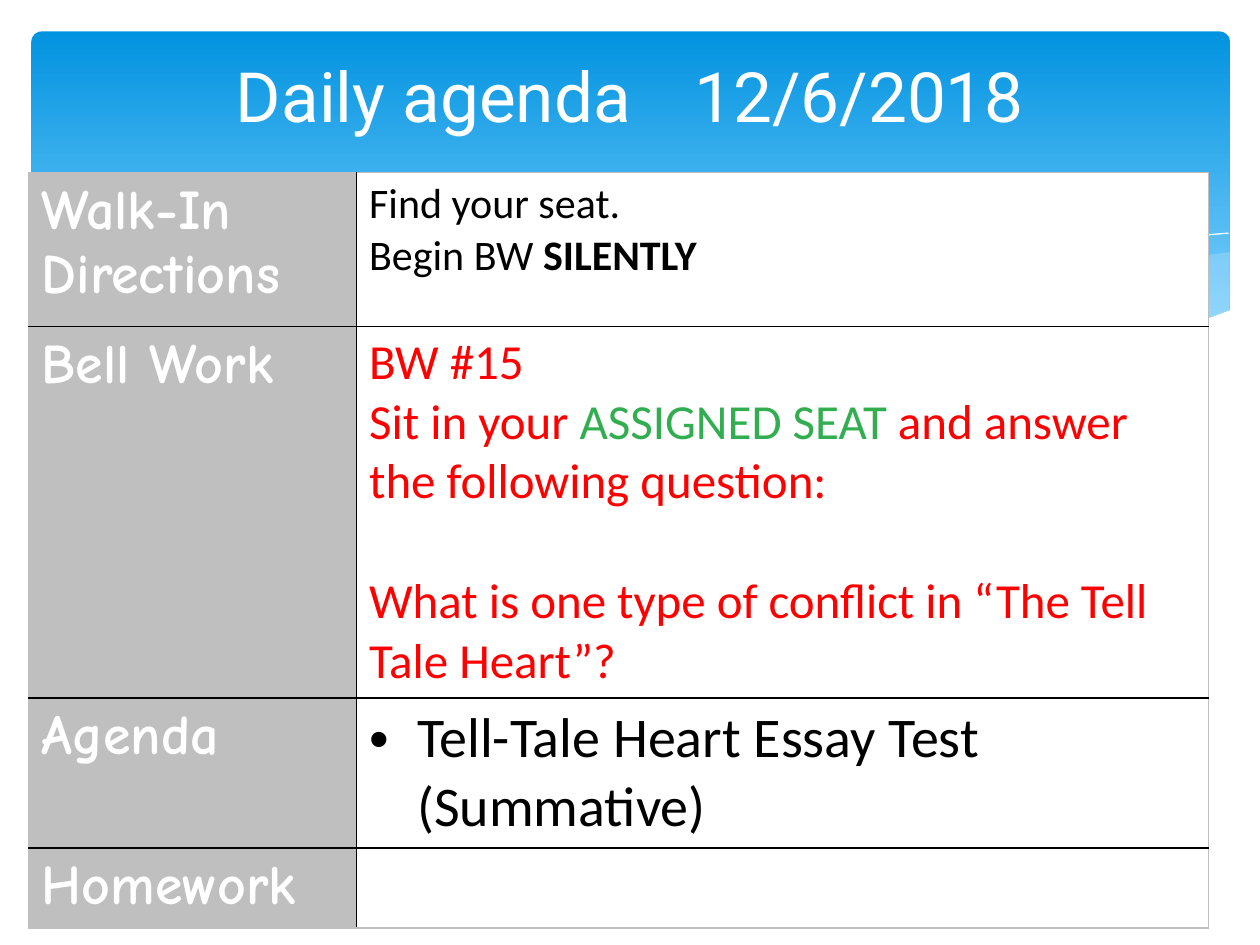
import pptx
import pptx.dml.color
import pptx.enum.shapes
import pptx.enum.text
import pptx.oxml
import pptx.oxml.ns
import pptx.util
from pptx.util import Inches, Pt

BLACK, WHITE, GREY, RED, GREEN = "000000", "FFFFFF", "BFBFBF", "FF0000", "32AE51"
COLUMN_WIDTHS = [2.6, 6.76]
ROW_HEIGHTS = [1.22, 2.95, 1.19, 0.61]
LABELS = ["Walk-In Directions", "Bell Work", "Agenda", "Homework"]

RIGHT_RIBBON = [
    (9.76, 2), (9.48, 2.04), (9.06, 2.13), (8.61, 2.23), (8.05, 2.37),
    (7.53, 2.48), (7.06, 2.57), (6.61, 2.65), (7.05, 2.71), (7.57, 2.76),
    (8.03, 2.78), (8.44, 2.77), (8.81, 2.73), (9.13, 2.67), (9.42, 2.59),
    (9.76, 2.47),
]
MIDDLE_RIBBON = [
    (8.93, 2.73), (8.37, 2.65), (7.75, 2.54), (7.06, 2.4), (6.29, 2.22),
    (5.69, 2.08), (5.14, 1.98), (4.65, 1.91), (4.2, 1.87), (3.8, 1.85),
    (3.44, 1.86), (2.86, 1.91), (3.42, 1.99), (4.04, 2.11), (4.91, 2.32),
    (5.66, 2.48), (6.34, 2.61), (6.95, 2.7), (7.48, 2.76), (7.96, 2.78),
    (8.48, 2.77),
]
LONG_CURVE = [
    (3.09, 1.95), (3.44, 1.9), (3.87, 1.87), (4.33, 1.87), (4.89, 1.9),
    (5.56, 1.97), (6.36, 2.08), (7.27, 2.26), (8.31, 2.51), (9.07, 2.72),
]
RIGHT_CURVE = [
    (6.13, 2.57), (6.72, 2.41), (7.48, 2.23), (8.06, 2.1), (8.66, 1.99),
    (9.1, 1.92), (9.51, 1.87), (9.75, 1.85),
]
WHITE_WAVE = [
    (9.77, 2.46), (9.5, 2.56), (9.2, 2.65), (8.87, 2.71), (8.5, 2.75),
    (8.09, 2.77), (7.61, 2.75), (7.08, 2.7), (6.48, 2.62), (5.79, 2.5),
    (5.03, 2.33), (4.18, 2.13), (3.4, 1.97), (2.71, 1.88), (2.11, 1.84),
    (1.61, 1.84), (1.19, 1.87), (0.85, 1.93), (0.52, 2.01), (0.23, 2.13),
    (0.23, 3.29), (9.77, 3.29),
]


def rgb(color):
    return pptx.dml.color.RGBColor.from_string(color)


def add_text(p, text, size=28, color=BLACK, font="Calibri", bold=False):
    r = p.add_run()
    r.text = text
    r.font.size = Pt(size)
    r.font.name = font
    r.font.bold = bold
    r.font.color.rgb = rgb(color)
    return r


def add_banner(s):
    sp = s.shapes.add_shape(pptx.enum.shapes.MSO_SHAPE.ROUNDED_RECTANGLE,
                            Inches(0.25), Inches(0.25), Inches(9.51), Inches(2.7))
    sp.adjustments[0] = 0.03
    sp.shadow.inherit = False
    sp.line.fill.background()
    sp.fill.gradient()
    sp.fill.gradient_angle = 270
    for stop, position, color in zip(sp.fill.gradient_stops, (0, 0.9), ("0293E0", "83D3FE")):
        stop.position = position
        stop.color.rgb = rgb(color)


def add_path(s, points, fill=None, opacity=100):
    start, *rest = [(Inches(x), Inches(y)) for x, y in points]
    builder = s.shapes.build_freeform(*start)
    builder.add_line_segments(rest, close=fill is not None)
    sp = builder.convert_to_shape()
    sp.shadow.inherit = False
    if fill is None:
        sp.fill.background()
        sp.line.color.rgb = rgb(WHITE)
        sp.line.width = Pt(0)
        return
    sp.line.fill.background()
    sp.fill.solid()
    sp.fill.fore_color.rgb = rgb(fill)
    if opacity < 100:
        color = sp._element.spPr.find(".//" + pptx.oxml.ns.qn("a:srgbClr"))
        color.append(pptx.oxml.parse_xml(
            f'<a:alpha {pptx.oxml.ns.nsdecls("a")} val="{opacity * 1000}"/>'))


def add_title(s):
    tf = s.shapes.add_textbox(Inches(0.5), Inches(0.37), Inches(9), Inches(1.37)).text_frame
    tf.word_wrap = True
    p = tf.paragraphs[0]
    p.alignment = pptx.enum.text.PP_ALIGN.CENTER
    add_text(p, "Daily agenda\t 12/6/2018", size=39.6, color=WHITE, font="Roboto")


def set_bullet(p, indent):
    pPr = p._p.get_or_add_pPr()
    pPr.set("marL", str(Inches(indent)))
    pPr.set("indent", str(-Inches(indent)))
    pPr.append(pptx.oxml.parse_xml(
        f'<a:buFont {pptx.oxml.ns.nsdecls("a")} typeface="Arial"/>'))
    pPr.append(pptx.oxml.parse_xml(
        f'<a:buChar {pptx.oxml.ns.nsdecls("a")} char="•"/>'))


def format_cell(cell, fill, borders):
    tcPr = cell._tc.get_or_add_tcPr()
    for side, color in borders.items():
        tcPr.append(pptx.oxml.parse_xml(
            f'<a:{side} {pptx.oxml.ns.nsdecls("a")} w="12700"><a:solidFill>'
            f'<a:srgbClr val="{color}"/></a:solidFill></a:{side}>'))
    cell.fill.solid()
    cell.fill.fore_color.rgb = rgb(fill)


def add_agenda_table(s):
    table = s.shapes.add_table(len(ROW_HEIGHTS), len(COLUMN_WIDTHS), Inches(0.23), Inches(1.37),
                               Inches(sum(COLUMN_WIDTHS)), Inches(sum(ROW_HEIGHTS))).table
    table.first_row = table.horz_banding = False
    for column, width in zip(table.columns, COLUMN_WIDTHS):
        column.width = Inches(width)
    last = len(ROW_HEIGHTS) - 1
    for i, (row, height, label) in enumerate(zip(table.rows, ROW_HEIGHTS, LABELS)):
        row.height = Inches(height)
        for j, cell in enumerate(row.cells):
            format_cell(cell, WHITE if j else GREY, {
                "lnL": BLACK if j else GREY,
                "lnR": GREY if j else BLACK,
                "lnT": BLACK if i else GREY,
                "lnB": GREY if i == last else BLACK,
            })
        add_text(row.cells[0].text_frame.paragraphs[0], label,
                 size=32, color=WHITE, font="Comic Neue", bold=True)
    return table


def fill_agenda(table):
    directions, bell_work, agenda = [table.cell(i, 1).text_frame for i in range(3)]

    add_text(directions.paragraphs[0], "Find your seat.", size=24)
    p = directions.add_paragraph()
    add_text(p, "Begin BW ", size=24)
    add_text(p, "SILENTLY", size=24, bold=True)

    add_text(bell_work.paragraphs[0], "BW #15", color=RED)
    p = bell_work.add_paragraph()
    add_text(p, "Sit in your ", color=RED)
    add_text(p, "ASSIGNED SEAT ", color=GREEN)
    add_text(p, "and answer the following question:", color=RED)
    p = bell_work.add_paragraph()
    p.space_before = Pt(34)
    add_text(p, "What is one type of conflict in “The Tell Tale Heart”?", color=RED)

    p = agenda.paragraphs[0]
    set_bullet(p, 0.38)
    add_text(p, "Tell-Tale Heart Essay Test (Summative)", size=32)


def main():
    prs = pptx.Presentation()
    prs.slide_width, prs.slide_height = Inches(10), Inches(7.5)
    s = prs.slides.add_slide(prs.slide_layouts[6])
    add_banner(s)
    add_path(s, RIGHT_RIBBON, fill="C6E7FC", opacity=29)
    add_path(s, MIDDLE_RIBBON, fill="C6E7FC", opacity=40)
    add_path(s, LONG_CURVE)
    add_path(s, RIGHT_CURVE)
    add_path(s, WHITE_WAVE, fill=WHITE)
    add_title(s)
    fill_agenda(add_agenda_table(s))
    prs.save("out.pptx")


if __name__ == "__main__":
    main()
